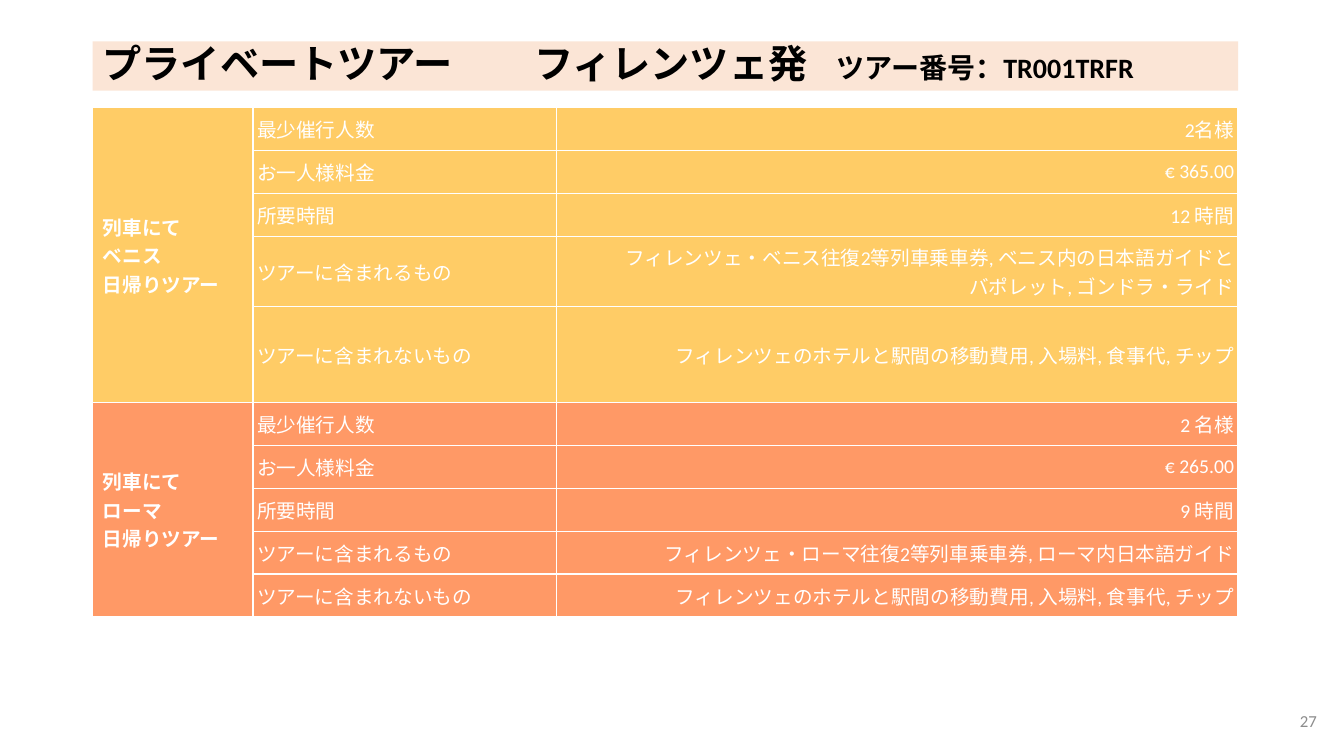
from dataclasses import dataclass

from lxml import etree
from pptx import Presentation
from pptx import util as u
from pptx.dml.color import RGBColor
from pptx.enum import shapes, text
from pptx.oxml import ns


@dataclass(frozen=True)
class Theme:
    face: str = "Calibri"
    head: float = 28
    code: float = 20
    body: float = 14
    foot: float = 12
    ink: str = "000000"
    white: str = "FFFFFF"
    grey: str = "8C8C8C"
    band: str = "FBE5D6"
    gold: str = "FFCC66"
    coral: str = "FF9966"


@dataclass(frozen=True)
class Tour:
    name: str
    fill: str
    terms: tuple[str, ...]
    highs: tuple[float, ...]


T = Theme()
LEFT, WIDE = 0.92, 11.36
COLS = (1.59, 3.01, 6.76)
ROW = 0.425
PAD = 0.04
LABELS = ("最少催行人数", "お一人様料金", "所要時間",
          "ツアーに含まれるもの", "ツアーに含まれないもの")
EXTRA = "フィレンツェのホテルと駅間の移動費用, 入場料, 食事代, チップ"
TOURS = (
    Tour("列車にて\nベニス\n日帰りツアー", T.gold,
         ("2名様", "€ 365.00", "12 時間",
          "フィレンツェ・ベニス往復2等列車乗車券, ベニス内の日本語ガイドと\n"
          "バポレット, ゴンドラ・ライド", EXTRA),
         (ROW, ROW, ROW, 0.7, 0.95)),
    Tour("列車にて\nローマ\n日帰りツアー", T.coral,
         ("2 名様", "€ 265.00", "9 時間",
          "フィレンツェ・ローマ往復2等列車乗車券, ローマ内日本語ガイド", EXTRA),
         (ROW,) * 5),
)


def style(font, size: float, color: str, bold: bool = False) -> None:
    font.name, font.size, font.bold = T.face, u.Pt(size), bold
    font.color.rgb = RGBColor.from_string(color)


def set_tabs(para, stops: tuple[float, ...]) -> None:
    tabs = etree.SubElement(para._p.get_or_add_pPr(), ns.qn("a:tabLst"))
    for stop in stops:
        etree.SubElement(tabs, ns.qn("a:tab"), pos=str(u.Inches(stop)), algn="l")


def add_head(slide) -> None:
    box = slide.shapes.add_shape(
        shapes.MSO_SHAPE.RECTANGLE, u.Inches(LEFT), u.Inches(0.41),
        u.Inches(WIDE), u.Inches(0.49))
    box.shadow.inherit = False
    box.fill.solid()
    box.fill.fore_color.rgb = RGBColor.from_string(T.band)
    box.line.fill.background()
    frame = box.text_frame
    frame.vertical_anchor = text.MSO_ANCHOR.MIDDLE
    para = frame.paragraphs[0]
    para.alignment = text.PP_ALIGN.LEFT
    para.line_spacing = 0.9
    set_tabs(para, (4.28, 7.28))
    for words, size in (("プライベートツアー\tフィレンツェ発\t", T.head),
                        ("ツアー番号：TR001TRFR", T.code)):
        run = para.add_run()
        run.text = words
        style(run.font, size, T.ink, True)


def add_edges(cell) -> None:
    props = cell._tc.get_or_add_tcPr()
    for spot, side in enumerate(("lnL", "lnR", "lnT", "lnB")):
        line = etree.Element(ns.qn(f"a:{side}"), w=str(u.Pt(1)))
        fill = etree.SubElement(line, ns.qn("a:solidFill"))
        etree.SubElement(fill, ns.qn("a:srgbClr"), val=T.white)
        props.insert(spot, line)


def set_cell(cell, words: str, fill: str, align, bold: bool = False) -> None:
    cell.fill.solid()
    cell.fill.fore_color.rgb = RGBColor.from_string(fill)
    cell.vertical_anchor = text.MSO_ANCHOR.MIDDLE
    cell.text = words
    for para in cell.text_frame.paragraphs:
        para.alignment = align
        style(para.font, T.body, T.white, bold)
    add_edges(cell)


def add_tours(slide) -> None:
    highs = [high for tour in TOURS for high in tour.highs]
    grid = slide.shapes.add_table(
        len(highs), len(COLS), u.Inches(LEFT), u.Inches(1.07),
        u.Inches(WIDE), u.Inches(sum(highs))).table
    grid.first_row = grid.horz_banding = False
    for col, width in zip(grid.columns, COLS):
        col.width = u.Inches(width)
    for row, high in zip(grid.rows, highs):
        row.height = u.Inches(high)

    left, right = text.PP_ALIGN.LEFT, text.PP_ALIGN.RIGHT
    size = len(LABELS)
    for part, tour in enumerate(TOURS):
        top = part * size
        for step, pair in enumerate(zip(LABELS, tour.terms)):
            # The first column is merged down the whole tour
            set_cell(grid.cell(top + step, 0), "" if step else tour.name,
                     tour.fill, left, True)
            for col, (words, align) in enumerate(zip(pair, (left, right)), 1):
                cell = grid.cell(top + step, col)
                cell.margin_left = cell.margin_right = u.Inches(PAD)
                cell.margin_top = cell.margin_bottom = u.Inches(PAD)
                set_cell(cell, words, tour.fill, align)
        grid.cell(top, 0).merge(grid.cell(top + size - 1, 0))


def add_page(slide) -> None:
    box = slide.shapes.add_textbox(
        u.Inches(10.16), u.Inches(6.95), u.Inches(3), u.Inches(0.4))
    frame = box.text_frame
    frame.word_wrap = True
    frame.vertical_anchor = text.MSO_ANCHOR.MIDDLE
    para = frame.paragraphs[0]
    para.text = "27"
    para.alignment = text.PP_ALIGN.RIGHT
    style(para.font, T.foot, T.grey)


def main() -> None:
    deck = Presentation()
    deck.slide_width, deck.slide_height = u.Inches(13.33), u.Inches(7.5)
    slide = deck.slides.add_slide(deck.slide_layouts[6])
    # Title band, tour table, page number
    add_head(slide)
    add_tours(slide)
    add_page(slide)
    deck.save("out.pptx")


if __name__ == "__main__":
    main()
